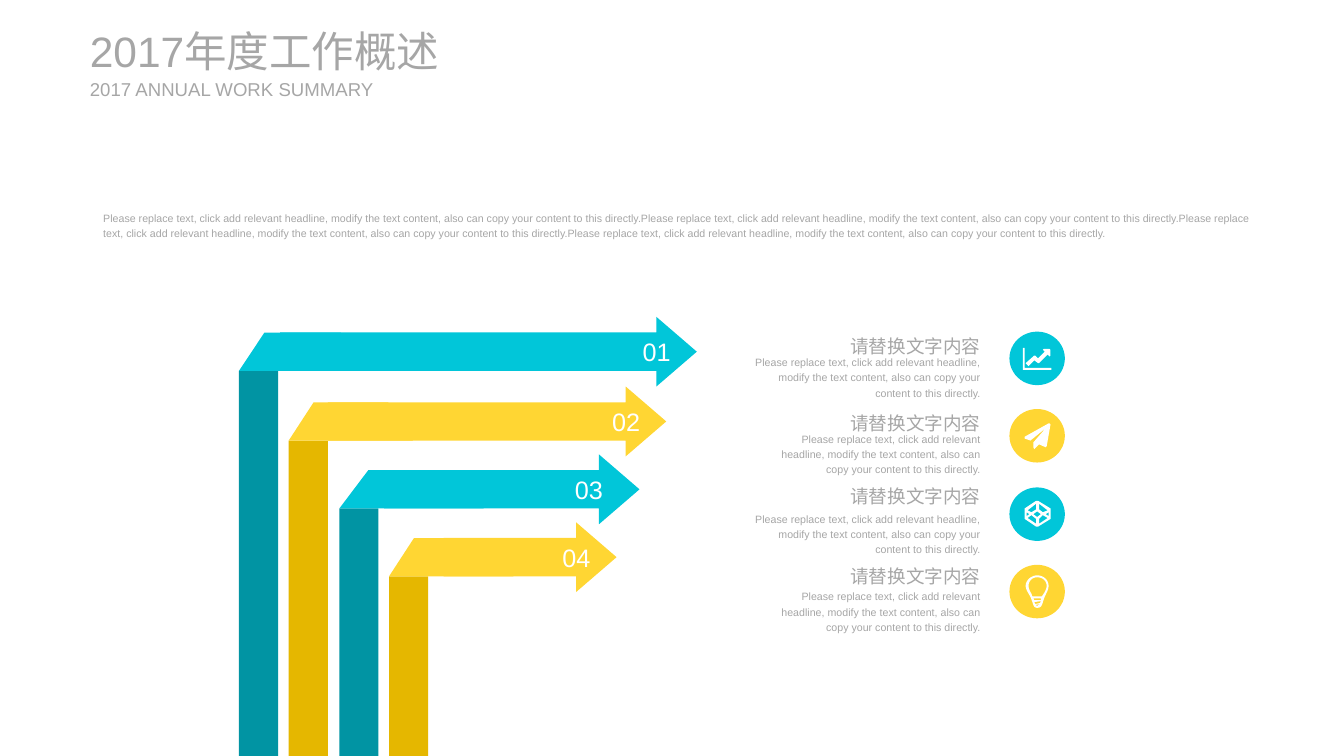
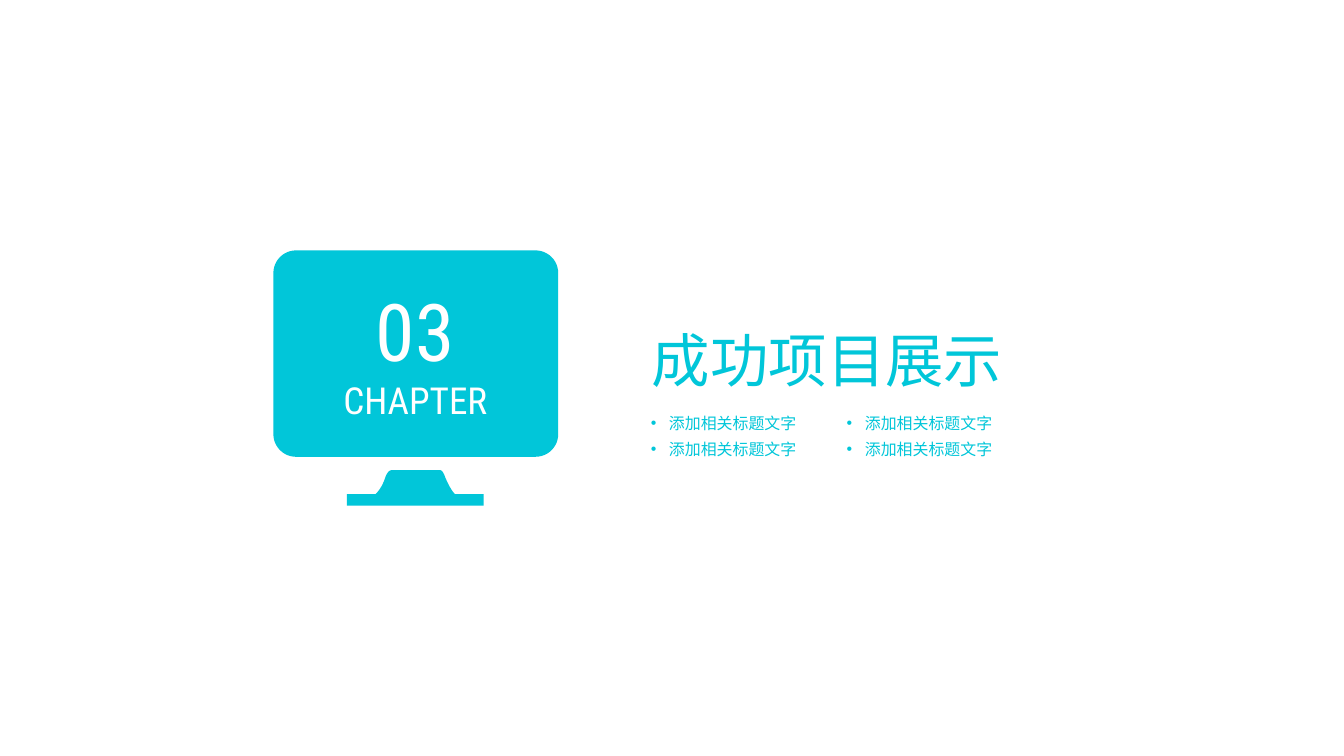
"""Build a work summary slide with folded arrows and a chapter slide with a monitor."""
import pptx
import pptx.dml.color
import pptx.enum.shapes
import pptx.enum.text
import pptx.oxml.ns
import pptx.util
from lxml import etree

RGBColor = pptx.dml.color.RGBColor
Shape = pptx.enum.shapes.MSO_SHAPE
Align = pptx.enum.text.PP_ALIGN
Anchor = pptx.enum.text.MSO_ANCHOR

CYAN = RGBColor(0x01, 0xC6, 0xD9)
TEAL = RGBColor(0x01, 0x94, 0xA3)
YELLOW = RGBColor(0xFF, 0xD6, 0x33)
GOLD = RGBColor(0xE5, 0xB7, 0x00)
GREY = RGBColor(0xA6, 0xA6, 0xA6)
WHITE = RGBColor(0xFF, 0xFF, 0xFF)

EMU_PER_PX = 9144
SLIDE_WIDTH, SLIDE_HEIGHT = 1406, 791
BODY_FONT, CHAPTER_FONT = "Arial", "Roboto Condensed"

SENTENCE = ("Please replace text, click add relevant headline, modify the text content, "
            "also can copy your content to this directly.")
HEADING = "请替换文字内容"
BULLET = "添加相关标题文字"

PILLAR_WIDTH, FOLD_HEIGHT, ARROW_HEIGHT = 41, 40, 73
# label, face, side, pillar left, pillar top, fold width, arrow left, arrow right, label left
ARROWS = [
    ("01", CYAN, TEAL, 250, 388, 133, 293, 729, 662),
    ("02", YELLOW, GOLD, 302, 461, 130, 343, 697, 630),
    ("03", CYAN, TEAL, 355, 532, 151, 402, 669, 591),
    ("04", YELLOW, GOLD, 407, 603, 130, 464, 645, 578),
]

CHART_ICON = [
    [(14, 17), (16, 17), (16, 38), (44, 38), (44, 40), (14, 40)],
    [(43, 25), (42, 26), (40, 24), (31, 33), (30, 33), (26, 30), (20, 36), (17, 33),
     (26, 25), (27, 25), (30, 28), (37, 21), (35, 19), (36, 18), (42, 18), (43, 19)],
]
PLANE_ICON = [
    [(43, 16), (39, 39), (38, 40), (31, 37), (27, 41), (26, 42), (25, 40), (25, 35),
     (38, 20), (22, 33), (16, 31), (16, 29), (41, 15), (42, 15)],
]
HEXAGON_ICON = [
    [(43, 32), (43, 33), (30, 41), (28, 41), (16, 33), (16, 22), (28, 14), (30, 14), (43, 22)],
    [(21, 28), (18, 26), (18, 30)],
    [(28, 23), (28, 17), (19, 24), (23, 26)],
    [(28, 38), (28, 33), (23, 29), (19, 32)],
    [(33, 28), (29, 25), (25, 28), (29, 31)],
    [(40, 24), (31, 17), (31, 23), (35, 26)],
    [(40, 32), (35, 29), (31, 33), (31, 38)],
    [(41, 30), (41, 26), (38, 28)],
]
BULB_ICON = [
    [(29, 11), (23, 11, 17, 16, 17, 22), (17, 27, 22, 32, 23, 36), (25, 41, 25, 45, 29, 45),
     (34, 45, 34, 42, 36, 36), (37, 32, 41, 27, 41, 22), (41, 16, 36, 11, 29, 11)],
    [(32, 40), (27, 41), (26, 39), (33, 38)],
    [(26, 37), (25, 35), (33, 35), (33, 37)],
    [(29, 43), (27, 42), (32, 41)],
    [(34, 33), (24, 33), (23, 30), (21, 27, 20, 24, 20, 22), (20, 17, 24, 13, 29, 13),
     (35, 13, 39, 17, 39, 22), (39, 24, 38, 27, 36, 30)],
]
STAND = [
    [(476, 517), (506, 517), (506, 529), (363, 529), (363, 517), (393, 517),
     (396, 514, 400, 509, 403, 500), (403, 500, 405, 493, 409, 492), (461, 492),
     (464, 493, 466, 500, 466, 500), (470, 509, 473, 514, 476, 517)],
]

ITEM_RIGHT, DISC_LEFT = 1026, 1056
# icon, colour, disc top, heading top, heading line spacing, body top, body width
ITEMS = [
    (CHART_ICON, CYAN, 347, 346, 1.2, 370, 236),
    (PLANE_ICON, YELLOW, 428, 426, 1.2, 450, 234),
    (HEXAGON_ICON, CYAN, 510, 507, 1, 534, 236),
    (BULB_ICON, YELLOW, 591, 591, 1, 615, 234),
]

BULLET_LEFTS, BULLET_TOPS = (671, 876), (428, 455)


def px(value):
    return pptx.util.Emu(round(value * EMU_PER_PX))


def paint(shape, color):
    shape.shadow.inherit = False
    shape.fill.solid()
    shape.fill.fore_color.rgb = color
    shape.line.fill.background()
    return shape


def add_block(slide, kind, box, color):
    return paint(slide.shapes.add_shape(kind, *map(px, box)), color)


def flatten(contour, steps=8):
    points = []
    for node in contour:
        if len(node) == 2:
            points.append(node)
            continue
        start, first, second, end = points[-1], node[:2], node[2:4], node[4:]
        for step in range(1, steps + 1):
            t = step / steps
            u = 1 - t
            points.append(tuple(
                u ** 3 * a + 3 * u * u * t * b + 3 * u * t * t * c + t ** 3 * d
                for a, b, c, d in zip(start, first, second, end)))
    return points


def add_outline(slide, contours, color, left=0, top=0):
    builder = None
    for contour in contours:
        points = [(px(left + x), px(top + y)) for x, y in flatten(contour)]
        if builder is None:
            builder = slide.shapes.build_freeform(*points[0])
        else:
            builder.move_to(*points[0])
        builder.add_line_segments(points[1:], close=True)
    return paint(builder.convert_to_shape(), color)


def write(shape, lines, color, font=BODY_FONT, align=Align.LEFT, anchor=Anchor.TOP,
          spacing=1, margins=(0, 0)):
    frame = shape.text_frame
    frame.word_wrap = True
    frame.auto_size = pptx.enum.text.MSO_AUTO_SIZE.NONE
    frame.vertical_anchor = anchor
    frame.margin_left = frame.margin_right = px(margins[0])
    frame.margin_top = frame.margin_bottom = px(margins[1])
    for index, (text, size) in enumerate(lines):
        paragraph = frame.add_paragraph() if index else frame.paragraphs[0]
        paragraph.alignment = align
        paragraph.line_spacing = float(spacing)
        run = paragraph.add_run()
        run.text = text
        run.font.name = font
        run.font.size = pptx.util.Pt(size)
        run.font.color.rgb = color


def add_text(slide, box, lines, color, **style):
    shape = slide.shapes.add_textbox(*map(px, box))
    write(shape, lines, color, **style)
    return shape


def add_titled_slide(presentation, title, box, size, color, anchor):
    slide = presentation.slides.add_slide(presentation.slide_layouts[5])
    shape = slide.shapes.title
    shape.left, shape.top, shape.width, shape.height = map(px, box)
    write(shape, [(title, size)], color, anchor=anchor)
    return slide


def add_bullet(paragraph):
    properties = paragraph._p.get_or_add_pPr()
    properties.set("marL", str(px(19)))
    properties.set("indent", str(px(-19)))
    for tag, name, value in (("a:buFont", "typeface", BODY_FONT), ("a:buChar", "char", "•")):
        etree.SubElement(properties, pptx.oxml.ns.qn(tag)).set(name, value)


def add_folded_arrow(slide, label, face, side, left, top, fold_width,
                     arrow_left, arrow_right, label_left):
    add_block(slide, Shape.RECTANGLE, (left, top, PILLAR_WIDTH, SLIDE_HEIGHT - top), side)
    middle = top - FOLD_HEIGHT / 2
    arrow = add_block(slide, Shape.RIGHT_ARROW,
                      (arrow_left, middle - ARROW_HEIGHT / 2,
                       arrow_right - arrow_left, ARROW_HEIGHT), face)
    arrow.adjustments[0], arrow.adjustments[1] = 0.55, 0.58
    fold = add_block(slide, Shape.FLOWCHART_MANUAL_OPERATION,
                     (left, top - FOLD_HEIGHT, fold_width, FOLD_HEIGHT), face)
    fold.rotation = 180
    add_text(slide, (label_left, middle - 16, 50, 32), [(label, 19)], WHITE,
             align=Align.CENTER, anchor=Anchor.MIDDLE)


def add_item(slide, icon, color, disc_top, heading_top, heading_spacing, body_top, body_width):
    add_text(slide, (ITEM_RIGHT - 145, heading_top, 145, 28), [(HEADING, 14)], GREY,
             align=Align.RIGHT, spacing=heading_spacing)
    add_text(slide, (ITEM_RIGHT - body_width, body_top, body_width, 47), [(SENTENCE, 8)], GREY,
             align=Align.RIGHT, spacing=1.2)
    add_block(slide, Shape.OVAL, (DISC_LEFT, disc_top, 58, 56), color)
    add_outline(slide, icon, WHITE, DISC_LEFT, disc_top)


def build_summary(presentation):
    slide = add_titled_slide(presentation, "2017年度工作概述", (94, 26, 432, 54), 32, GREY,
                             Anchor.MIDDLE)
    add_text(slide, (94, 81, 307, 24), [("2017 ANNUAL WORK SUMMARY", 14)], GREY,
             anchor=Anchor.MIDDLE)
    add_text(slide, (108, 219, 1202, 31), [(SENTENCE * 4, 8)], GREY, spacing=1.2)
    for arrow in ARROWS:
        add_folded_arrow(slide, *arrow)
    for item in ITEMS:
        add_item(slide, *item)


def build_chapter(presentation):
    slide = add_titled_slide(presentation, "成功项目展示", (682, 339, 369, 74), 44, CYAN,
                             Anchor.TOP)
    screen = add_block(slide, Shape.ROUNDED_RECTANGLE, (286, 262, 298, 216), CYAN)
    screen.adjustments[0] = 0.11
    add_outline(slide, STAND, CYAN)
    add_text(slide, (341, 294, 187, 148), [("03", 60), ("CHAPTER", 28)], WHITE,
             font=CHAPTER_FONT, align=Align.CENTER, anchor=Anchor.MIDDLE)
    for top in BULLET_TOPS:
        for left in BULLET_LEFTS:
            shape = add_text(slide, (left, top, 180, 30), [(BULLET, 12)], CYAN, margins=(10, 5))
            add_bullet(shape.text_frame.paragraphs[0])


def main():
    presentation = pptx.Presentation()
    presentation.slide_width = px(SLIDE_WIDTH)
    presentation.slide_height = px(SLIDE_HEIGHT)
    build_summary(presentation)
    build_chapter(presentation)
    presentation.save("out.pptx")


if __name__ == "__main__":
    main()
